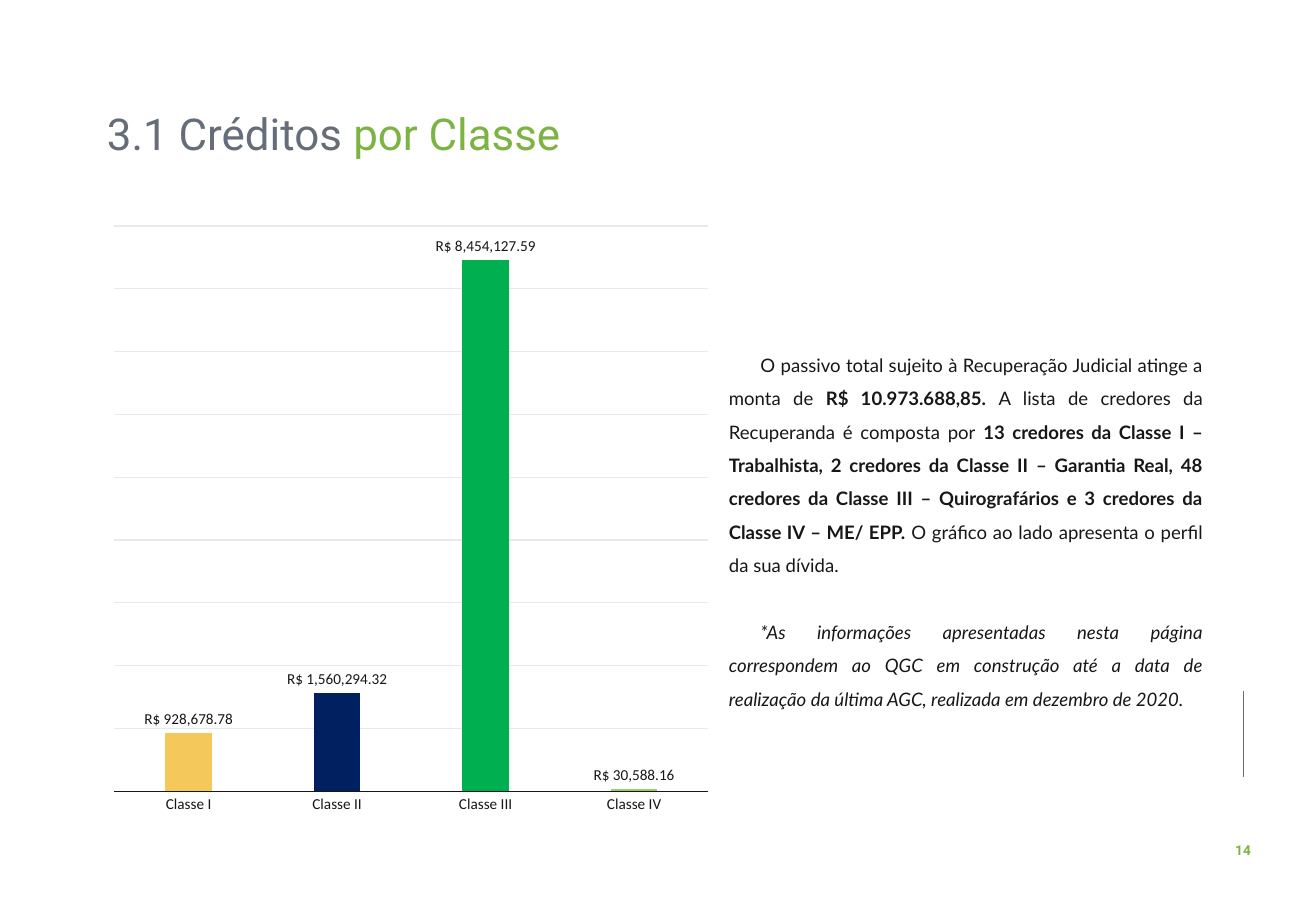
from dataclasses import dataclass

import pptx
import pptx.chart.data
import pptx.dml.color
import pptx.enum.chart
import pptx.enum.shapes
import pptx.enum.text
import pptx.oxml.ns
import pptx.oxml.xmlchemy
import pptx.util
from lxml import etree

Inches = pptx.util.Inches
Pt = pptx.util.Pt
RGBColor = pptx.dml.color.RGBColor
Align = pptx.enum.text.PP_ALIGN
Anchor = pptx.enum.text.MSO_ANCHOR

SLATE = RGBColor(0x65, 0x6D, 0x78)
GREEN = RGBColor(0x7C, 0xB3, 0x42)
INK = RGBColor(0x18, 0x17, 0x17)
GRID = RGBColor(0xE7, 0xE9, 0xEB)
GOLD = RGBColor(0xF4, 0xC8, 0x5A)
NAVY = RGBColor(0x00, 0x20, 0x60)
EMERALD = RGBColor(0x00, 0xB0, 0x50)
LIME = RGBColor(0x9C, 0xCC, 0x65)
CURRENCY = '"R$"\\ #,##0.00'


@dataclass(frozen=True)
class CreditClass:
    name: str
    amount: float
    color: RGBColor


@dataclass(frozen=True)
class Span:
    text: str
    bold: bool = False
    italic: bool = False


CREDIT_CLASSES = [
    CreditClass("Classe I", 928678.78, GOLD),
    CreditClass("Classe II", 1560294.32, NAVY),
    CreditClass("Classe III", 8454127.59, EMERALD),
    CreditClass("Classe IV", 30588.16, LIME),
]

COMMENTARY = [
    [
        Span("O passivo total sujeito à Recuperação Judicial atinge a monta de "),
        Span("R$ 10.973.688,85. ", bold=True),
        Span("A lista de credores da Recuperanda é composta por "),
        Span("13 credores da Classe I – Trabalhista, 2 credores da Classe II – "
             "Garantia Real, 48 credores da Classe III – Quirografários e "
             "3 credores da Classe IV – ME/ EPP. ", bold=True),
        Span("O gráfico ao lado apresenta o perfil da sua dívida."),
    ],
    [
        Span("*As informações apresentadas nesta página correspondem ao QGC em "
             "construção até a data de realização da última AGC, realizada em "
             "dezembro de 2020.", italic=True),
    ],
]


def format_font(font, *, name: str, size: float, color: RGBColor,
                bold: bool = False, italic: bool = False) -> None:
    font.name = name
    font.size = Pt(size)
    font.color.rgb = color
    font.bold = bold
    font.italic = italic


def add_span(para, text: str, **style) -> None:
    span = para.add_run()
    span.text = text
    format_font(span.font, **style)


def place(box, left: float, top: float, width: float, height: float) -> None:
    box.left, box.top = Inches(left), Inches(top)
    box.width, box.height = Inches(width), Inches(height)


def write_title(page) -> None:
    title = page.shapes.title
    place(title, 0.78, 0.86, 8.18, 0.53)
    title.text_frame.vertical_anchor = Anchor.MIDDLE
    title.text_frame.auto_size = pptx.enum.text.MSO_AUTO_SIZE.NONE
    para = title.text_frame.paragraphs[0]
    para.alignment = Align.LEFT
    para.line_spacing = 0.9
    add_span(para, "3.1 Créditos ", name="Roboto", size=26, color=SLATE)
    add_span(para, "por Classe", name="Roboto", size=26, color=GREEN)


def add_credit_chart(page) -> None:
    data = pptx.chart.data.CategoryChartData(number_format=CURRENCY)
    data.categories = [credit.name for credit in CREDIT_CLASSES]
    data.add_series("Series 1", [credit.amount for credit in CREDIT_CLASSES])
    chart = page.shapes.add_chart(
        pptx.enum.chart.XL_CHART_TYPE.COLUMN_CLUSTERED,
        Inches(0.84), Inches(1.76), Inches(5.09), Inches(5.04), data).chart
    chart.has_title = False
    chart.has_legend = False
    format_font(chart.font, name="Calibri", size=10, color=INK)

    category_axis = chart.category_axis
    category_axis.major_tick_mark = pptx.enum.chart.XL_TICK_MARK.NONE
    category_axis.format.line.color.rgb = INK
    category_axis.format.line.width = Pt(0.75)
    format_font(category_axis.tick_labels.font, name="Calibri", size=9, color=INK)

    value_axis = chart.value_axis
    value_axis.visible = False
    value_axis.minimum_scale = 0
    value_axis.maximum_scale = 9_000_000
    value_axis.major_unit = 1_000_000
    value_axis.major_gridlines.format.line.color.rgb = GRID
    value_axis.major_gridlines.format.line.width = Pt(0.75)

    plot = chart.plots[0]
    plot.gap_width = 219
    plot.overlap = -27
    plot.vary_by_categories = False
    series = plot.series[0]
    for index, credit in enumerate(CREDIT_CLASSES):
        fill = series.points[index].format.fill
        fill.solid()
        fill.fore_color.rgb = credit.color
    labels = series.data_labels
    labels.show_value = True
    labels.number_format = CURRENCY
    labels.number_format_is_linked = False
    labels.position = pptx.enum.chart.XL_LABEL_POSITION.OUTSIDE_END
    format_font(labels.font, name="Calibri", size=9, color=INK)


def add_commentary(page) -> None:
    box = page.shapes.add_textbox(Inches(5.9), Inches(2.77), Inches(4.1), Inches(2.85))
    frame = box.text_frame
    frame.word_wrap = True
    for index, spans in enumerate(COMMENTARY):
        para = frame.add_paragraph() if index else frame.paragraphs[0]
        para.alignment = Align.JUSTIFY
        para.line_spacing = 1.5
        if index:
            para.space_before = Pt(19.8)
        para._p.get_or_add_pPr().set("indent", str(Inches(0.26)))
        for span in spans:
            add_span(para, span.text, name="Lato", size=11, color=INK,
                     bold=span.bold, italic=span.italic)


def add_page_marker(page) -> None:
    rule = page.shapes.add_connector(
        pptx.enum.shapes.MSO_CONNECTOR.STRAIGHT,
        Inches(10.23), Inches(5.69), Inches(10.23), Inches(6.4))
    rule.line.color.rgb = SLATE
    rule.line.width = Pt(0.5)
    etree.SubElement(rule._element.spPr, pptx.oxml.ns.qn("a:effectLst"))

    number = page.shapes.add_textbox(Inches(10.06), Inches(6.88), Inches(0.34), Inches(0.24))
    number.text_frame.word_wrap = False
    para = number.text_frame.paragraphs[0]
    para.alignment = Align.CENTER
    add_span(para, "14", name="Roboto", size=8.1, color=GREEN, bold=True)


def main() -> None:
    deck = pptx.Presentation()
    deck.slide_width, deck.slide_height = Inches(10.83), Inches(7.5)
    page = deck.slides.add_slide(deck.slide_layouts[5])
    write_title(page)
    add_page_marker(page)
    add_commentary(page)
    add_credit_chart(page)
    deck.save("out.pptx")


if __name__ == "__main__":
    main()
